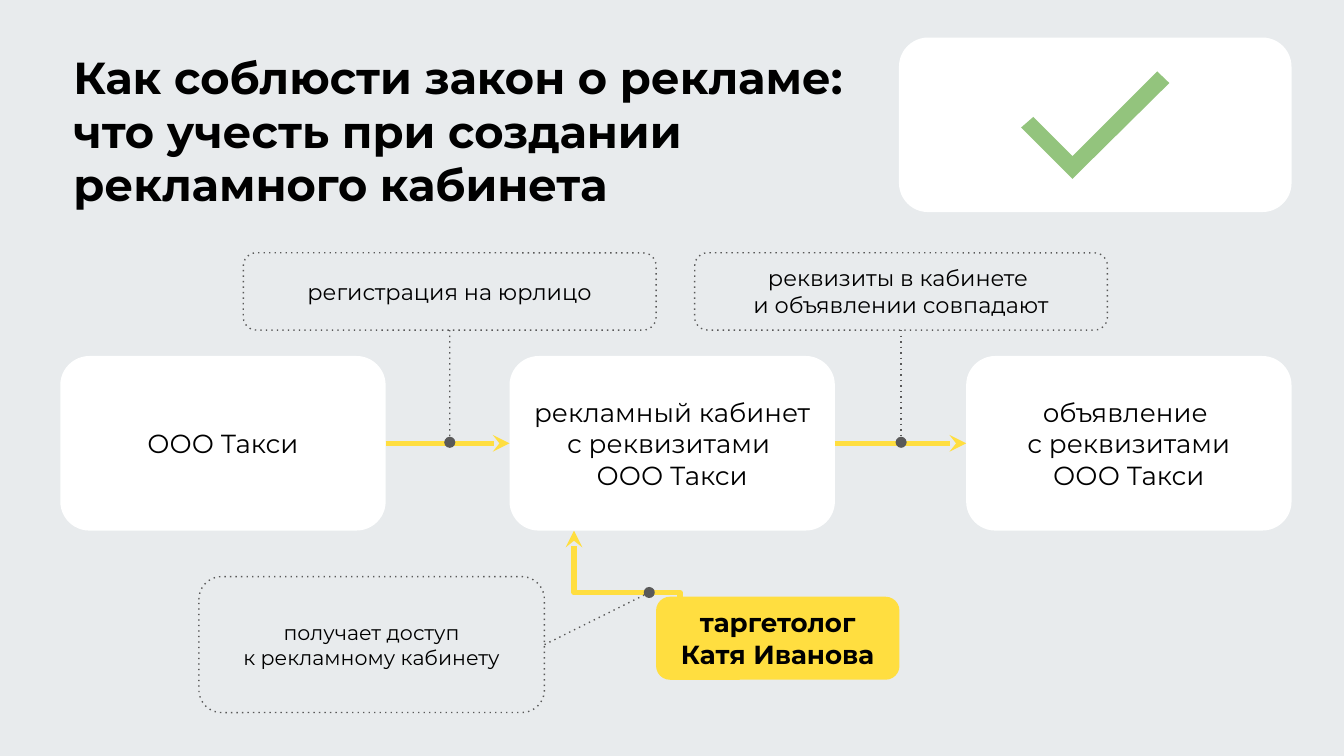
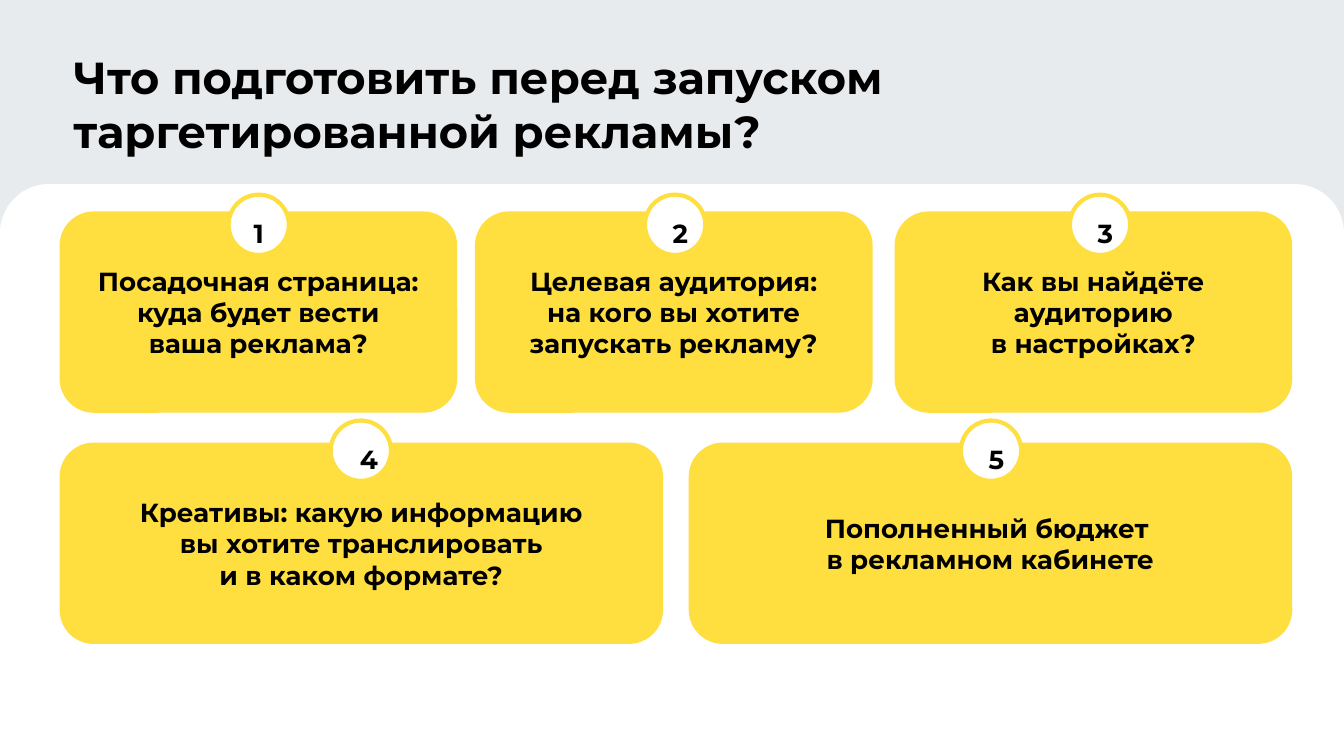
from dataclasses import dataclass

from lxml import etree
from pptx import Presentation
from pptx import util as u
from pptx.dml.color import RGBColor
from pptx.enum import shapes, text
from pptx.oxml.ns import qn

Cm, Pt = u.Cm, u.Pt
SHAPE = shapes.MSO_SHAPE
LINK = shapes.MSO_CONNECTOR
TOP, LEFT, BOTTOM, RIGHT = range(4)


@dataclass(frozen=True)
class Theme:
    font: str = "Montserrat"
    background: str = "E8EBED"
    ink: str = "000000"
    white: str = "FFFFFF"
    yellow: str = "FFDE40"
    grey: str = "595959"
    green: str = "93C47D"
    title: int = 24
    body: int = 14
    note: int = 12
    small_note: int = 11
    thin: float = 0.75
    ring: float = 2.25
    thick: float = 3


def set_all(target, **values):
    for name, value in values.items():
        setattr(target, name, value)


class Deck:
    def __init__(self, theme):
        self.theme = theme
        self.presentation = Presentation()
        set_all(self.presentation, slide_width=Cm(25.4), slide_height=Cm(14.29))
        self.slide = None

    def new_slide(self, title):
        self.slide = self.presentation.slides.add_slide(
            self.presentation.slide_layouts[6])
        fill = self.slide.background.fill
        fill.solid()
        fill.fore_color.rgb = RGBColor.from_string(self.theme.background)
        self.text_box((1.14, 0.69, 18.24, 1.45), title, size=self.theme.title,
                      align=text.PP_ALIGN.LEFT, inset=0.25)

    def add_words(self, shape, words, size, bold, anchor,
                  align=text.PP_ALIGN.CENTER, inset=None):
        frame = shape.text_frame
        set_all(frame, word_wrap=True, vertical_anchor=anchor)
        if inset is not None:
            margin = Cm(inset)
            set_all(frame, margin_left=margin, margin_top=margin,
                    margin_right=margin, margin_bottom=margin)
        paragraph = frame.paragraphs[0]
        paragraph.text = words
        paragraph.alignment = align
        for run in paragraph.runs:
            set_all(run.font, name=self.theme.font, size=Pt(size), bold=bold)
            run.font.color.rgb = RGBColor.from_string(self.theme.ink)

    def text_box(self, box, words, size, **layout):
        shape = self.slide.shapes.add_textbox(*map(Cm, box))
        self.add_words(shape, words, size, True, text.MSO_ANCHOR.TOP, **layout)

    def stroke(self, item, color, width, dotted=False, tail=None):
        item.line.color.rgb = RGBColor.from_string(color)
        item.line.width = Pt(width)
        outline = item._element.spPr.get_or_add_ln()
        if dotted:
            etree.SubElement(outline, qn("a:prstDash"), val="dot")
        if tail:
            etree.SubElement(outline, qn("a:tailEnd"), type=tail)

    def paint(self, shape, fill=None, line=None, width=None, dotted=False):
        shape.shadow.inherit = False
        if fill:
            shape.fill.solid()
            shape.fill.fore_color.rgb = RGBColor.from_string(fill)
        else:
            shape.fill.background()
        if line:
            self.stroke(shape, line, width or self.theme.thin, dotted)
        else:
            shape.line.fill.background()

    def shape(self, kind, box, adjustments=(), **paint):
        shape = self.slide.shapes.add_shape(kind, *map(Cm, box))
        for index, value in enumerate(adjustments):
            shape.adjustments[index] = value
        self.paint(shape, **paint)
        return shape

    def card(self, box, words="", size=None, bold=False, **paint):
        shape = self.shape(SHAPE.ROUNDED_RECTANGLE, box, [0.167], **paint)
        if words:
            self.add_words(shape, words, size or self.theme.body, bold,
                           text.MSO_ANCHOR.MIDDLE, inset=0.25)
        return shape

    def note(self, box, words, size):
        return self.card(box, words, size, line=self.theme.grey, dotted=True)

    def outline(self, points, fill):
        first, *rest = [(Cm(x), Cm(y)) for x, y in points]
        builder = self.slide.shapes.build_freeform(*first)
        builder.add_line_segments(rest, close=True)
        self.paint(builder.convert_to_shape(), fill=fill)

    def connector(self, kind, start, end, **stroke):
        connector = self.slide.shapes.add_connector(kind, *map(Cm, start + end))
        self.stroke(connector, **stroke)
        etree.SubElement(connector._element.spPr, qn("a:effectLst"))
        return connector

    def arrow(self, source, target):
        connector = self.connector(LINK.STRAIGHT, (0, 0), (1, 1),
                                   color=self.theme.yellow,
                                   width=self.theme.thick, tail="stealth")
        connector.begin_connect(source, RIGHT)
        connector.end_connect(target, LEFT)

    def rising_elbow(self, start, end):
        """Elbow arrow that leaves and arrives vertically: a quarter-turned connector."""
        middle_x, middle_y = (start[0] + end[0]) / 2, (start[1] + end[1]) / 2
        half_x, half_y = (start[0] - end[0]) / 2, (start[1] - end[1]) / 2
        connector = self.connector(
            LINK.ELBOW, (middle_x + half_y, middle_y - half_x),
            (middle_x - half_y, middle_y + half_x),
            color=self.theme.yellow, width=self.theme.thick, tail="stealth")
        connector._element.spPr.find(qn("a:xfrm")).set("rot", str(90 * 60000))

    def pointer(self, note, side, end):
        connector = self.connector(LINK.STRAIGHT, (0, 0), end,
                                   color=self.theme.grey, width=self.theme.thin,
                                   dotted=True, tail="oval")
        connector.begin_connect(note, side)

    def number(self, center, top, digit, digit_width):
        diameter = 1.14
        self.shape(SHAPE.OVAL, (center - diameter / 2, top, diameter, diameter),
                   fill=self.theme.white, line=self.theme.yellow,
                   width=self.theme.ring)
        self.text_box((center - digit_width / 2, top + 0.31, digit_width, 0.51),
                      digit, self.theme.body)


def add_law_slide(deck):
    theme = deck.theme
    deck.new_slide("Как соблюсти закон о рекламе: \nчто учесть при создании \n"
                   "рекламного кабинета")
    deck.rising_elbow((12.85, 12.37), (10.85, 10.03))
    deck.card((16.99, 0.71, 7.42, 3.3), fill=theme.white)
    deck.outline([(20.27, 3.38), (19.3, 2.41), (19.53, 2.21), (20.27, 2.95),
                  (21.87, 1.35), (22.1, 1.57)], theme.green)

    steps = [
        (1.14, "ООО Такси"),
        (9.63, "рекламный кабинет с реквизитами \nООО Такси"),
        (18.26, "объявление \nс реквизитами\nООО Такси"),
    ]
    cards = [deck.card((left, 6.73, 6.15, 3.3), words, fill=theme.white)
             for left, words in steps]
    for source, target in zip(cards, cards[1:]):
        deck.arrow(source, target)

    note_width = 7.8
    for left, words in [(4.6, "регистрация на юрлицо"),
                        (13.13, "реквизиты в кабинете \nи объявлении совпадают")]:
        note = deck.note((left, 4.78, note_width, 1.46), words, theme.note)
        deck.pointer(note, BOTTOM, (left + note_width / 2, 8.36))

    deck.card((12.4, 11.28, 4.6, 1.57), "таргетолог Катя Иванова", bold=True,
              fill=theme.yellow)
    access = deck.note((3.76, 10.9, 6.53, 2.57),
                       "получает доступ\nк рекламному кабинету", theme.small_note)
    deck.pointer(access, RIGHT, (12.27, 11.2))


def add_checklist_slide(deck):
    theme = deck.theme
    deck.new_slide("Что подготовить перед запуском таргетированной рекламы?")
    deck.shape(SHAPE.ROUND_2_SAME_RECTANGLE, (0, 3.48, 25.4, 10.81), [0.086, 0],
               fill=theme.white)

    # Each row: card top, card width, number top; each card: left, number centre,
    # digit width, words.
    rows = [
        (4.01, 7.49, 3.68, [
            (1.14, 4.89, 0.23,
             "Посадочная страница: куда будет вести\nваша реклама?"),
            (8.99, 12.76, 0.41,
             "Целевая аудитория:\nна кого вы хотите запускать рекламу?"),
            (16.92, 20.79, 0.41, "Как вы найдёте аудиторию\nв настройках?"),
        ]),
        (8.38, 11.38, 7.95, [
            (1.14, 6.82, 0.46, "Креативы: какую информацию\n"
             "вы хотите транслировать\nи в каком формате?"),
            (13.03, 18.73, 0.41, "Пополненный бюджет \nв рекламном кабинете"),
        ]),
    ]
    digit = 0
    for top, width, number_top, cards in rows:
        for left, center, digit_width, words in cards:
            digit += 1
            deck.card((left, top, width, 3.78), words, bold=True,
                      fill=theme.yellow, line=theme.yellow)
            deck.number(center, number_top, str(digit), digit_width)


def main():
    deck = Deck(Theme())
    add_law_slide(deck)
    add_checklist_slide(deck)
    deck.presentation.save("out.pptx")


if __name__ == "__main__":
    main()
